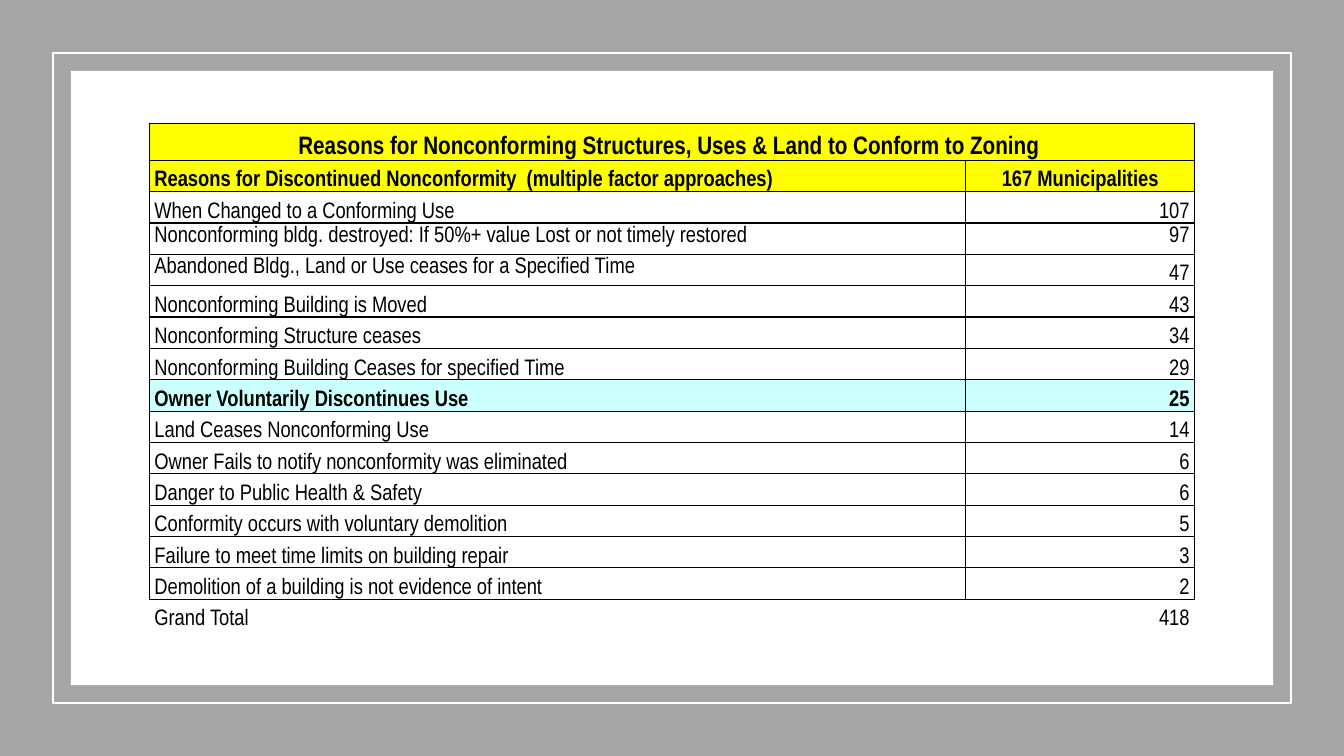
"""Build the slide that tabulates reasons for ending zoning nonconformity."""
from lxml import etree
from pptx import Presentation
from pptx.dml.color import RGBColor
from pptx.enum.shapes import MSO_SHAPE as SHAPE
from pptx.enum.text import MSO_ANCHOR as ANCHOR, PP_ALIGN as ALIGN
from pptx.oxml.ns import qn
from pptx.util import Pt

BLACK = RGBColor(0x00, 0x00, 0x00)
WHITE = RGBColor(0xFF, 0xFF, 0xFF)
GRAY = RGBColor(0xA6, 0xA6, 0xA6)
YELLOW = RGBColor(0xFF, 0xFF, 0x00)
AQUA = RGBColor(0xCC, 0xFF, 0xFF)

FONT = "Arial Narrow"
SLIDE_W, SLIDE_H = 960, 540
COL_WIDTHS = (583.2, 163.4)
TITLE_H, ROW_H = 26.2, 22.42
BORDER_TAGS = ("a:lnL", "a:lnR", "a:lnT", "a:lnB")

TITLE = "Reasons for Nonconforming Structures, Uses & Land to Conform to Zoning "
HEADERS = ("Reasons for Discontinued Nonconformity  (multiple factor approaches)",
           "167 Municipalities")
REASONS = (
    ("When Changed to a Conforming Use", 107),
    ("Nonconforming bldg. destroyed: If 50%+ value Lost or not timely restored", 97),
    ("Abandoned Bldg., Land or Use ceases for a Specified Time", 47),
    ("Nonconforming Building is Moved", 43),
    ("Nonconforming Structure ceases", 34),
    ("Nonconforming Building Ceases for specified Time", 29),
    ("Owner Voluntarily Discontinues Use", 25),
    ("Land Ceases Nonconforming Use", 14),
    ("Owner Fails to notify nonconformity was eliminated", 6),
    ("Danger to Public Health & Safety", 6),
    ("Conformity occurs with voluntary demolition", 5),
    ("Failure to meet time limits on building repair", 3),
    ("Demolition of a building is not evidence of intent", 2),
    ("Grand Total", 418),
)
HIGHLIGHTED = "Owner Voluntarily Discontinues Use"
TOP_ANCHORED = ((3, 0), (3, 1), (4, 0))


def add_rect(slide, left, top, width, height, fill=None, line=None):
    sp = slide.shapes.add_shape(SHAPE.RECTANGLE, Pt(left), Pt(top), Pt(width), Pt(height))
    sp.shadow.inherit = False
    if fill is None:
        sp.fill.background()
    else:
        sp.fill.solid()
        sp.fill.fore_color.rgb = fill
    if line is None:
        sp.line.fill.background()
    else:
        sp.line.color.rgb = line
        sp.line.width = Pt(1.5)


def set_borders(cell, shown):
    tc_pr = cell._tc.get_or_add_tcPr()
    for i, tag in enumerate(BORDER_TAGS):
        ln = etree.Element(qn(tag), w=str(Pt(1)))
        if tag in shown:
            fill = etree.SubElement(ln, qn("a:solidFill"))
            etree.SubElement(fill, qn("a:srgbClr"), val=str(BLACK))
        else:
            etree.SubElement(ln, qn("a:noFill"))
        tc_pr.insert(i, ln)


def style_cell(cell, fill=None, borders=BORDER_TAGS):
    cell.margin_left = cell.margin_right = Pt(3.6)
    cell.margin_top = cell.margin_bottom = Pt(0)
    if fill is None:
        cell.fill.background()
    else:
        cell.fill.solid()
        cell.fill.fore_color.rgb = fill
    set_borders(cell, borders)


def write_cell(cell, text, align, size=16, bold=False, anchor=ANCHOR.BOTTOM):
    cell.vertical_anchor = anchor
    p = cell.text_frame.paragraphs[0]
    p.text = text
    p.alignment = align
    p.line_spacing = 1.15
    p.space_after = Pt(8)
    p.font.name = FONT
    p.font.size = Pt(size)
    p.font.bold = bold
    p.font.color.rgb = BLACK


def add_reasons_table(slide, left, top):
    rows = len(REASONS) + 2
    height = TITLE_H + ROW_H * (rows - 1)
    table = slide.shapes.add_table(rows, 2, Pt(left), Pt(top),
                                   Pt(sum(COL_WIDTHS)), Pt(height)).table
    table.first_row = table.horz_banding = False
    for column, width in zip(table.columns, COL_WIDTHS):
        column.width = Pt(width)
    for i, row in enumerate(table.rows):
        row.height = Pt(ROW_H if i else TITLE_H)

    for cell in table.rows[0].cells:
        style_cell(cell, YELLOW)
    table.cell(0, 0).merge(table.cell(0, 1))
    write_cell(table.cell(0, 0), TITLE, ALIGN.CENTER, size=18, bold=True)

    for cell, text, align in zip(table.rows[1].cells, HEADERS, (ALIGN.LEFT, ALIGN.CENTER)):
        style_cell(cell, YELLOW)
        write_cell(cell, text, align, bold=True)

    for r, (reason, count) in enumerate(REASONS, start=2):
        marked = reason == HIGHLIGHTED
        borders = ("a:lnT",) if r == rows - 1 else BORDER_TAGS
        for c, (text, align) in enumerate(((reason, ALIGN.LEFT), (str(count), ALIGN.RIGHT))):
            cell = table.cell(r, c)
            anchor = ANCHOR.TOP if (r, c) in TOP_ANCHORED else ANCHOR.BOTTOM
            style_cell(cell, AQUA if marked else None, borders)
            write_cell(cell, text, align, bold=marked, anchor=anchor)


def main():
    prs = Presentation()
    prs.slide_width, prs.slide_height = Pt(SLIDE_W), Pt(SLIDE_H)
    slide = prs.slides.add_slide(prs.slide_layouts[6])
    add_rect(slide, 0, 0, SLIDE_W, SLIDE_H, fill=GRAY)
    add_rect(slide, 37.6, 37.9, 884.8, 464.2, line=WHITE)
    add_rect(slide, 50.6, 50.6, 858.8, 438.8, fill=WHITE)
    add_reasons_table(slide, 106.7, 88.3)
    prs.save("out.pptx")


if __name__ == "__main__":
    main()
